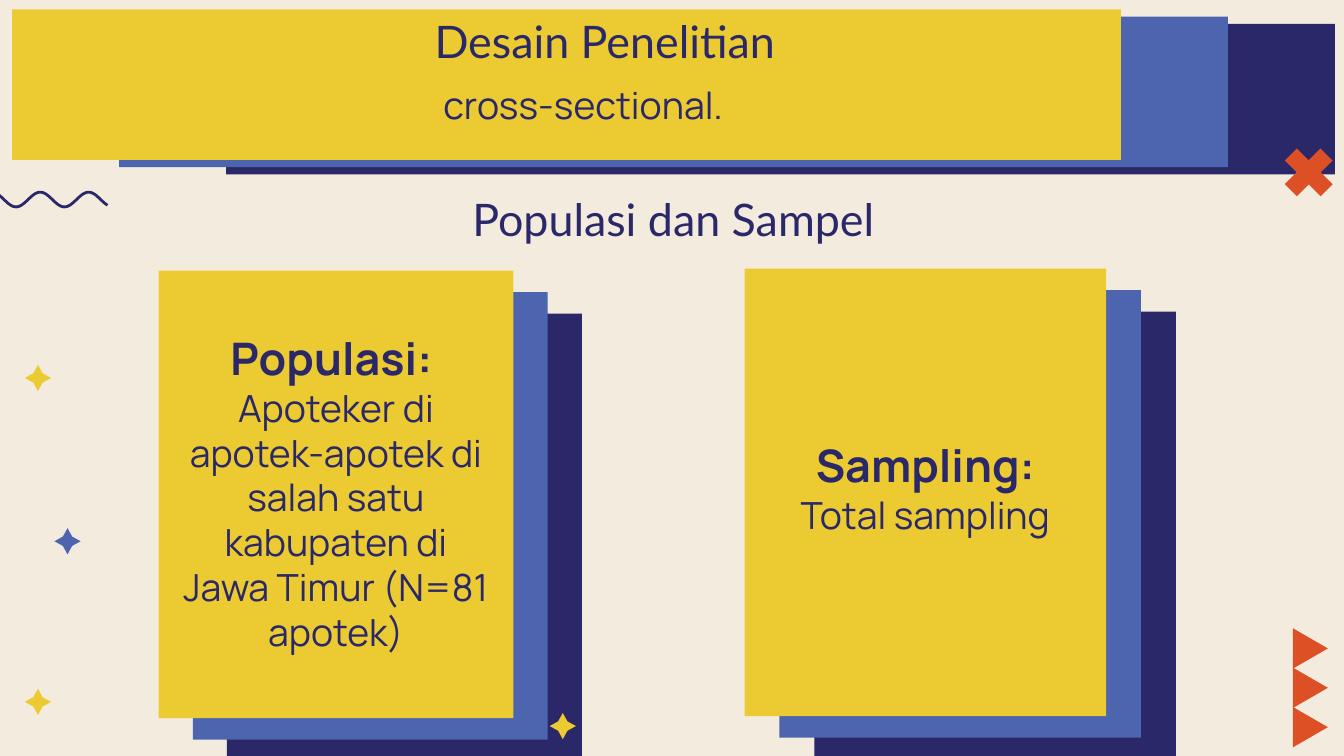
from math import cos, pi
from pptx import Presentation
from pptx.dml.color import RGBColor
from pptx.enum.shapes import MSO_SHAPE as Form
from pptx.enum.text import MSO_ANCHOR, MSO_AUTO_SIZE, PP_ALIGN
from pptx.oxml.ns import qn
from pptx.util import Inches, Pt

COLORS = {"paper": "F3EBDE", "gold": "ECCA31", "blue": "4C65AE",
          "navy": "2A2869", "red": "DD5025"}
UNIT = Inches(0.1)  # grid of 100 columns by 56.25 rows


def grid(*cells):
    return [round(cell * UNIT) for cell in cells]


def tint(name):
    return RGBColor.from_string(COLORS[name])


def draw(slide, form, box, color, turn=0):
    shape = slide.shapes.add_shape(form, *grid(*box))
    shape.shadow.inherit = False
    shape.fill.solid()
    shape.fill.fore_color.rgb = tint(color)
    shape.line.fill.background()
    shape.rotation = turn
    return shape


def stack(slide, box):
    """Three sheets, each shifted by a fixed share of the front one."""
    x, y, w, h = box
    for step, color in ((2, "navy"), (1, "blue"), (0, "gold")):
        shift = (x + step * w * 0.965 / 10, y + step * h * 0.48 / 10, w, h)
        draw(slide, Form.RECTANGLE, shift, color)


def write(slide, index, box, lines, anchor=MSO_ANCHOR.TOP):
    """Fill a placeholder with (text, size, font, bold) lines, in front."""
    holder = slide.placeholders[index]
    slide.shapes._spTree.append(holder._element)
    holder.left, holder.top, holder.width, holder.height = grid(*box)
    frame = holder.text_frame
    frame.word_wrap = True
    frame.auto_size = MSO_AUTO_SIZE.NONE
    frame.vertical_anchor = anchor
    frame.margin_left = frame.margin_right = UNIT
    frame.margin_top = frame.margin_bottom = UNIT
    frame.text = "\n".join(line[0] for line in lines)
    for para, (_, size, face, bold) in zip(frame.paragraphs, lines):
        para.alignment = PP_ALIGN.CENTER
        para.space_before = para.space_after = Pt(0)
        para.line_spacing = 1.0
        # No bullet and no indent
        props = para._p.get_or_add_pPr()
        props.set("marL", "0")
        props.set("indent", "0")
        props.append(props.makeelement(qn("a:buNone"), {}))
        para.font.size, para.font.name, para.font.bold = Pt(size), face, bold
        para.font.color.rgb = tint("navy")


def header(slide, box):
    x, y, w, h = box
    stack(slide, box)
    write(slide, 0, (x + 7.2, 0, 73.8, 5.1),
          [("Desain Penelitian", 24, "Lato", False)])
    write(slide, 1, (x + 1.7, y + 0.42 * h, w - 0.9, 4.8),
          [("cross-sectional.", 20, "Manrope", False)], MSO_ANCHOR.MIDDLE)


def card(slide, box, index, head, body, drop):
    x, y, w, h = box
    stack(slide, box)
    write(slide, index, (x + 0.5, y + drop, w - 1, h - 1.2),
          [(head, 24, "Manrope", True), (body, 20, "Manrope", False)],
          MSO_ANCHOR.MIDDLE)


def star(slide, x, y, color):
    draw(slide, Form.STAR_4_POINT, (x, y, 1.95, 1.95), color).adjustments[0] = 0.25


def cross(slide, box):
    draw(slide, Form.CROSS, box, "red", 45).adjustments[0] = 0.33


def wave(slide, box):
    """A cosine line of three crests across the box."""
    x, y, w, h = box
    count = 80
    points = []
    for i in range(count + 1):
        across = x + w * i / count
        down = y + h / 2 * (1 - cos(2 * pi * (across - 3) / 3.6))
        points.append(grid(across, down))
    pen = slide.shapes.build_freeform(*points[0])
    pen.add_line_segments(points[1:], close=False)
    line = pen.convert_to_shape()
    line.shadow.inherit = False
    line.fill.background()
    line.line.color.rgb = tint("navy")
    line.line.width = Pt(1.5)


def arrows(slide, box):
    x, y, w, h = box
    for i in range(3):
        draw(slide, Form.ISOSCELES_TRIANGLE, (x, y + i * 2.93, w, h), "red", 90)


def main():
    deck = Presentation()
    deck.slide_width, deck.slide_height = grid(100, 56.25)
    slide = deck.slides.add_slide(deck.slide_layouts[4])
    slide.background.fill.solid()
    slide.background.fill.fore_color.rgb = tint("paper")

    # Left margin stars
    for x, y, color in ((1.85, 27.15, "gold"), (4.05, 39.3, "blue"),
                        (1.85, 51.25, "gold")):
        star(slide, x, y, color)

    # Header and section title
    header(slide, (0.9, 0.7, 82.5, 11.2))
    write(slide, 3, (22.1, 13.3, 56, 6.3),
          [("Populasi dan Sampel", 24, "Lato", False)])

    # Cards
    card(slide, (11.8, 20.15, 26.4, 33.3), 2, "Populasi: ",
         "Apoteker di apotek-apotek di salah satu kabupaten di "
         "Jawa Timur (N=81 apotek)", 0.45)
    card(slide, (55.4, 20, 26.9, 33.3), 4, "Sampling:", "Total sampling", 0.2)

    # Ornaments
    star(slide, 40.9, 53.05, "gold")
    cross(slide, (95.5, 10.95, 3.75, 3.75))
    wave(slide, (-2.4, 14.3, 10.4, 1.1))
    arrows(slide, (96, 46.95, 3, 2.6))
    deck.save("out.pptx")


if __name__ == "__main__":
    main()
